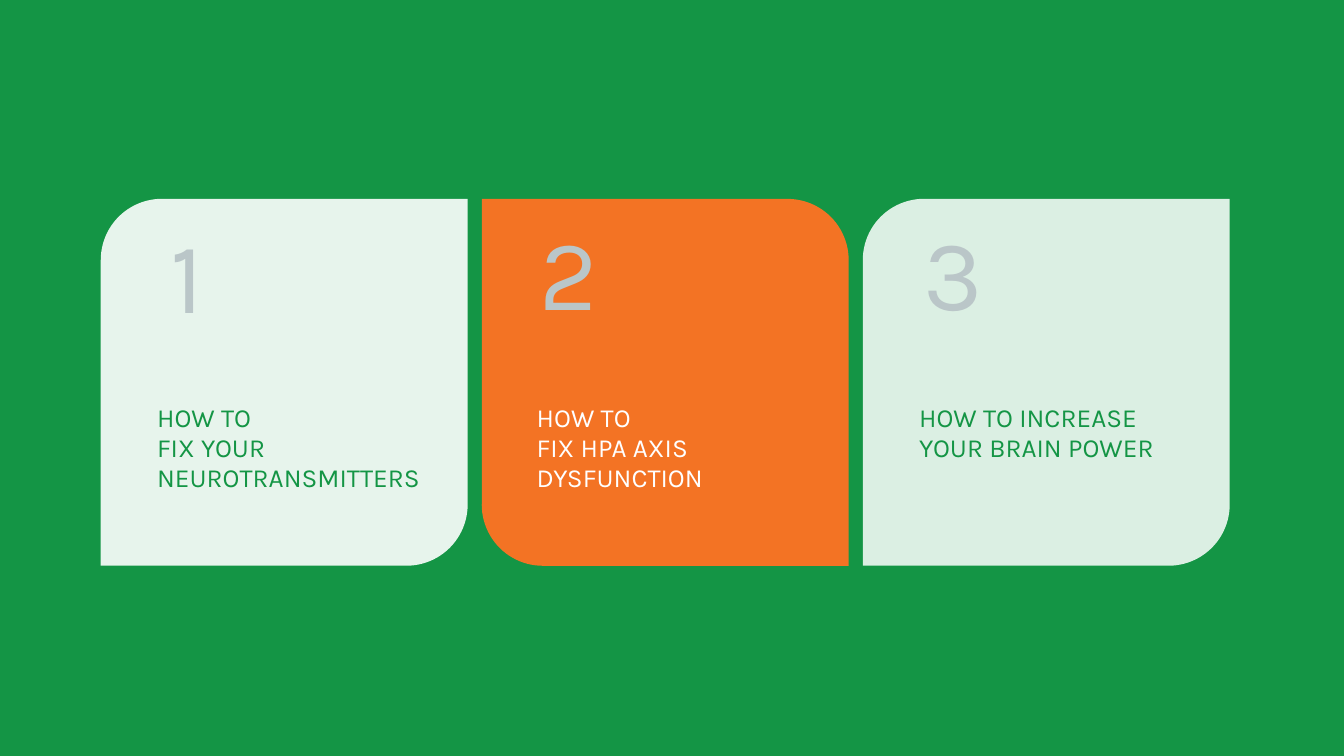
from lxml import etree
from pptx import Presentation
from pptx.dml.color import RGBColor
from pptx.enum.shapes import MSO_SHAPE
from pptx.enum.text import MSO_ANCHOR, PP_ALIGN
from pptx.oxml.ns import qn
from pptx.util import Emu, Pt

RECT = MSO_SHAPE.RECTANGLE
LEAF = MSO_SHAPE.ROUND_2_DIAG_RECTANGLE
TOP = MSO_ANCHOR.TOP
LEFT, MID = PP_ALIGN.LEFT, PP_ALIGN.CENTER
SCALE = 9144
FONT = "Karla"
HUES = {"green": "149545", "orange": "F37324", "white": "FFFFFF", "gray": "BAC6C8"}
SIDE, STEP = 273, 283.5

CARDS = [
    ("1", "HOW TO\vFIX YOUR NEUROTRANSMITTERS", "white", 90, 0, "green", (10, 5), (32, 219)),
    ("2", "HOW TO\vFIX HPA AXIS DYSFUNCTION", "orange", 100, 270, "white", (10, 3), (31, 215)),
    ("3", "HOW TO INCREASE YOUR BRAIN POWER", "white", 85, 0, "green", (13, 3), (32, 201)),
]


def px(n):
    return Emu(round(n * SCALE))


def hue(name):
    return RGBColor.from_string(HUES[name])


def block(slide, kind, box, fill, alpha=100):
    shape = slide.shapes.add_shape(kind, *map(px, box))
    shape.shadow.inherit = False
    shape.line.fill.background()
    shape.fill.solid()
    shape.fill.fore_color.rgb = hue(fill)
    if alpha < 100:
        tone = shape.fill._xPr.find(qn("a:solidFill"))[0]
        etree.SubElement(tone, qn("a:alpha"), val=str(alpha * 1000))
    return shape


def label(slide, box, text, size, color, align, pitch=None):
    frame = slide.shapes.add_textbox(*map(px, box)).text_frame
    frame.word_wrap = True
    frame.vertical_anchor = TOP
    frame.text = text
    para = frame.paragraphs[0]
    para.alignment = align
    para.space_before = Pt(size * 0.2)
    if pitch:
        para.line_spacing = Pt(pitch)
    for run in para.runs:
        run.font.name = FONT
        run.font.size = Pt(size)
        run.font.color.rgb = hue(color)


def card(slide, left, top, data):
    digit, title, fill, alpha, turn, ink, spot, (inset, wide) = data
    leaf = block(slide, LEAF, (left, top, SIDE, SIDE), fill, alpha)
    leaf.rotation = turn
    label(slide, (left + spot[0], top + spot[1], 109, 162), digit, 54, "gray", MID)
    label(slide, (left + inset, top + 147, wide, 252), title, 14, ink, LEFT, 16)


def main():
    deck = Presentation()
    deck.slide_width, deck.slide_height = px(1000), px(562.5)
    slide = deck.slides.add_slide(deck.slide_layouts[6])
    block(slide, RECT, (0, 0, 1000, 562.5), "green")
    for i, data in enumerate(CARDS):
        card(slide, 75 + i * STEP, 148, data)
    deck.save("out.pptx")


if __name__ == "__main__":
    main()
